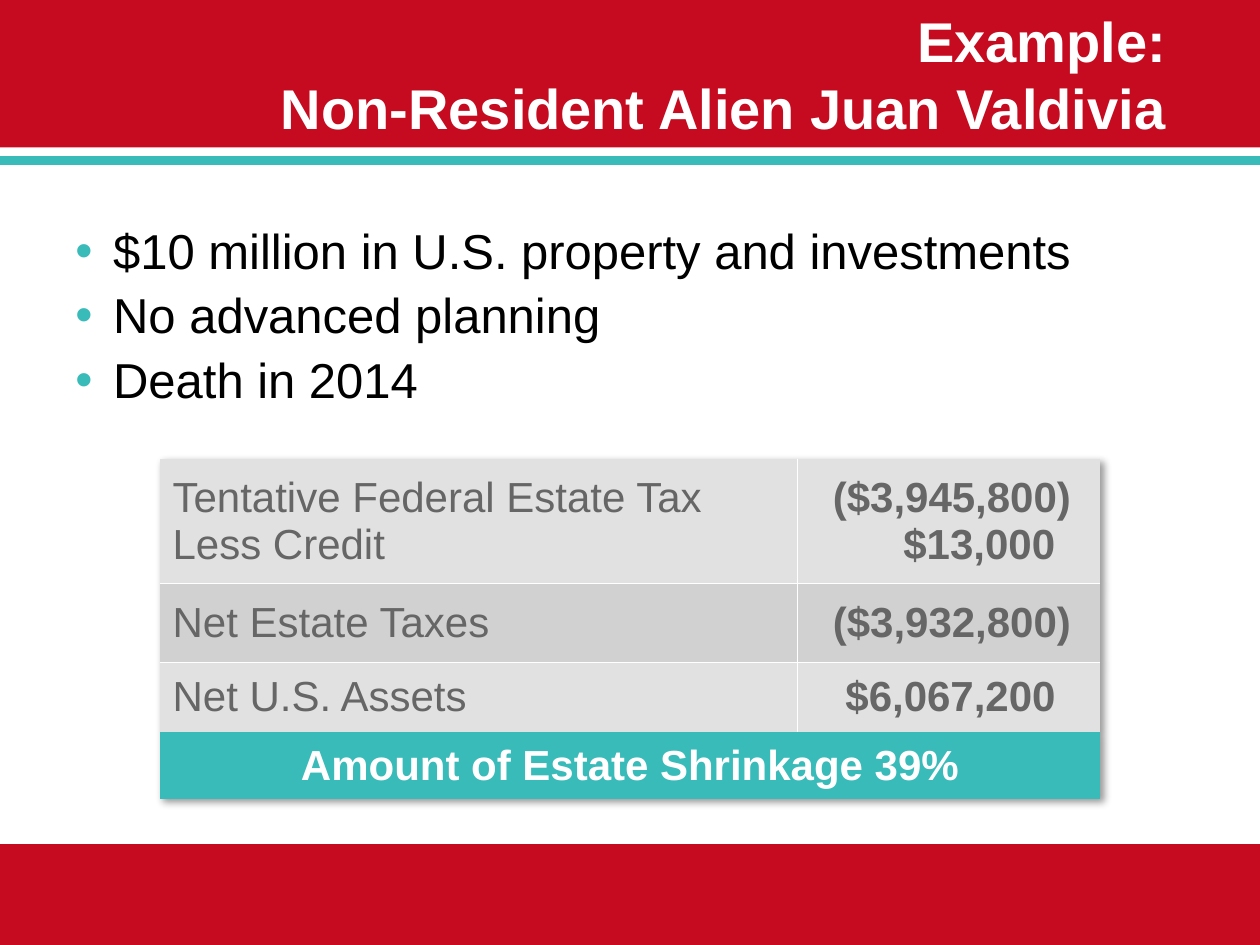
from lxml import etree
from pptx import Presentation
from pptx.dml.color import RGBColor
from pptx.enum.shapes import MSO_SHAPE
from pptx.enum.text import MSO_ANCHOR, MSO_AUTO_SIZE, PP_ALIGN
from pptx.oxml import parse_xml
from pptx.util import Inches, Pt

RECT = MSO_SHAPE.RECTANGLE
MIDDLE, BOTTOM = MSO_ANCHOR.MIDDLE, MSO_ANCHOR.BOTTOM
LEFT, RIGHT, CENTER = PP_ALIGN.LEFT, PP_ALIGN.RIGHT, PP_ALIGN.CENTER
RED, TEAL, WHITE, BLACK, GRAY = "C60B20", "38BBB9", "FFFFFF", "000000", "666666"
LIGHT, DARK = "E1E1E1", "D1D1D1"
NS = "http://schemas.openxmlformats.org/drawingml/2006/main"

TITLE = "Example:\vNon-Resident Alien Juan Valdivia"
BANDS = [(0, 1.17, RED), (1.24, 0.07, TEAL), (6.7, 0.8, RED)]  # top, height, fill
POINTS = ["$10 million in U.S. property and investments",
          "No advanced planning", "Death in 2014"]
# height, fill, labels, amounts with their indents
ROWS = [
    (0.99, LIGHT, ["Tentative Federal Estate Tax", "Less Credit"],
     [("($3,945,800)", 0.18), ("$13,000", 0.74)]),
    (0.63, DARK, ["Net Estate Taxes"], [("($3,932,800)", 0.18)]),
    (0.55, LIGHT, ["Net U.S. Assets"], [("$6,067,200", 0.28)]),
]
TOTAL = (0.53, "Amount of Estate Shrinkage 39%")
COLS = [5.06, 2.4]


def rgb(code):
    return RGBColor.from_string(code)


def add(parent, tag, **attrs):
    return etree.SubElement(parent, f"{{{NS}}}{tag}", attrs)


def style(para, size, color, bold=False, align=LEFT):
    para.alignment = align
    for run in para.runs:
        font = run.font
        font.name, font.size, font.bold = "Arial", Pt(size), bold
        font.color.rgb = rgb(color)


def paint(shape, color):
    shape.fill.solid()
    shape.fill.fore_color.rgb = rgb(color)


def indent(para, left, hang=0):
    props = para._p.get_or_add_pPr()
    props.set("marL", str(Inches(left)))
    props.set("indent", str(-Inches(hang)))
    return props


def fill_cell(cell, lines, color, ink, sides="", bold=False, align=LEFT):
    """Write (text, indent) lines; sides names the edges with a white rule."""
    cell.text = "\n".join(text for text, _ in lines)
    cell.vertical_anchor = MIDDLE
    for para, (_, left) in zip(cell.text_frame.paragraphs, lines):
        indent(para, left)
        style(para, 24, ink, bold, align)
    props = cell._tc.get_or_add_tcPr()
    for side in "LRTB":
        line = add(props, "ln" + side, w=str(Pt(1)))
        if side in sides:
            add(add(line, "solidFill"), "srgbClr", val=WHITE)
        else:
            add(line, "noFill")
    paint(cell, color)


prs = Presentation()
prs.slide_width, prs.slide_height = Inches(10), Inches(7.5)
slide = prs.slides.add_slide(prs.slide_layouts[5])
shapes = slide.shapes

for top, height, color in BANDS:
    band = shapes.add_shape(RECT, 0, Inches(top), prs.slide_width, Inches(height))
    paint(band, color)
    band.line.fill.background()
    band.shadow.inherit = False

title = shapes.title
shapes._spTree.append(title._element)  # bring in front of the bands
title.left, title.top = Inches(0.5), Inches(0.04)
title.width, title.height = Inches(9), Inches(1.13)
frame = title.text_frame
frame.text = TITLE
frame.word_wrap, frame.auto_size = True, MSO_AUTO_SIZE.NONE
frame.vertical_anchor, frame.margin_right = BOTTOM, Inches(0.24)
style(frame.paragraphs[0], 32, WHITE, True, RIGHT)

body = shapes.add_textbox(Inches(0.5), Inches(1.75), Inches(9), Inches(1.69))
frame = body.text_frame
frame.word_wrap = True
frame.text = "\n".join(POINTS)
for i, para in enumerate(frame.paragraphs):
    para.line_spacing = 0.9
    if i:
        para.space_before = Pt(6.7)
    props = indent(para, 0.3, 0.3)
    add(add(props, "buClr"), "srgbClr", val=TEAL)
    add(props, "buFont", typeface="Arial")
    add(props, "buChar", char="•")
    style(para, 28, BLACK)

heights = [row[0] for row in ROWS] + [TOTAL[0]]
table = shapes.add_table(len(heights), len(COLS), Inches(1.27), Inches(3.64),
                         Inches(sum(COLS)), Inches(sum(heights))).table
table.first_row = table.horz_banding = False
for col, width in zip(table.columns, COLS):
    col.width = Inches(width)
for row, height in zip(table.rows, heights):
    row.height = Inches(height)

last = len(ROWS) - 1
for i, (_, color, labels, amounts) in enumerate(ROWS):
    rules = ("T" if i else "") + ("B" if i < last else "")
    fill_cell(table.cell(i, 0), [(text, 0) for text in labels], color, GRAY, "R" + rules)
    fill_cell(table.cell(i, 1), amounts, color, GRAY, "L" + rules, True)
total = table.cell(len(ROWS), 0)
total.merge(table.cell(len(ROWS), 1))
fill_cell(total, [(TOTAL[1], 0)], TEAL, WHITE, bold=True, align=CENTER)

table._tbl.tblPr.insert(0, parse_xml(
    f'<a:effectLst xmlns:a="{NS}"><a:outerShdw blurRad="50800" dist="38100" '
    'dir="2700000" algn="tl" rotWithShape="0"><a:srgbClr val="000000">'
    '<a:alpha val="40000"/></a:srgbClr></a:outerShdw></a:effectLst>'))

prs.save("out.pptx")
